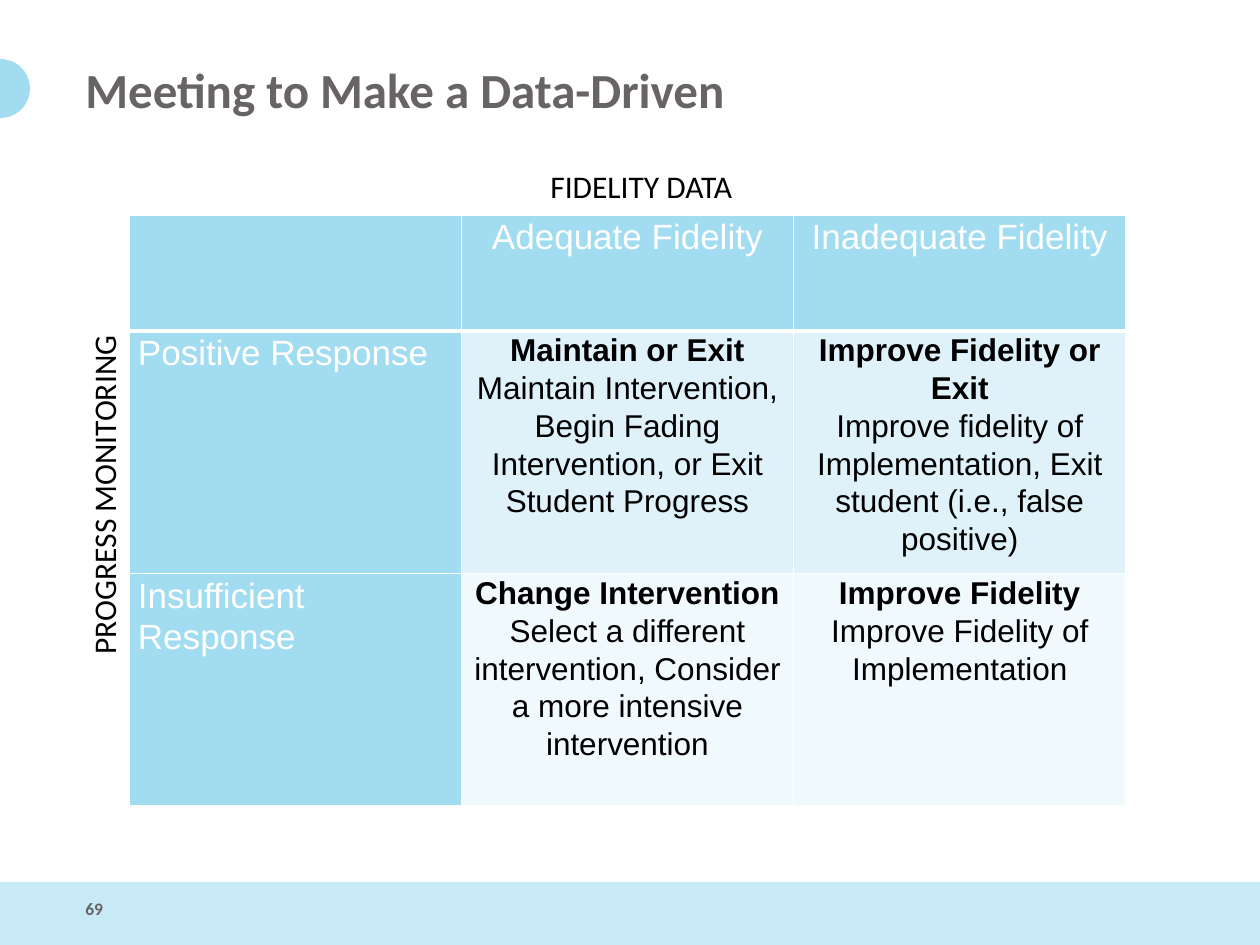
from lxml.etree import SubElement
from pptx import Presentation
from pptx.dml.color import RGBColor
from pptx.enum.shapes import MSO_SHAPE as SHAPE
from pptx.enum.text import MSO_ANCHOR as ANCHOR, PP_ALIGN as ALIGN
from pptx.oxml.ns import qn
from pptx.util import Pt

PX = 914400 / 126  # EMU per px
WHITE = RGBColor(0xFF, 0xFF, 0xFF)
BLACK = RGBColor(0, 0, 0)
GRAY = RGBColor(0x69, 0x64, 0x64)
SKY = RGBColor(0xA2, 0xDC, 0xF0)
FOOTER_BLUE = RGBColor(0xC7, 0xEA, 0xF6)
PALE = RGBColor(0xE0, 0xF2, 0xF9)
PALER = RGBColor(0xF0, 0xF9, 0xFC)

HEADERS = ["", "Adequate Fidelity", "Inadequate Fidelity"]
RESPONSES = [
    ("Positive Response", PALE, [
        ("Maintain or Exit", "Maintain Intervention, Begin Fading "
         "Intervention, or Exit Student Progress"),
        ("Improve Fidelity or Exit", "Improve fidelity of Implementation, "
         "Exit student (i.e., false positive)")]),
    ("Insufficient Response", PALER, [
        ("Change Intervention", "Select a different intervention, "
         "Consider a more intensive intervention"),
        ("Improve Fidelity", "Improve Fidelity of Implementation")]),
]


def emu(*lengths):
    return [round(v * PX) for v in lengths]


def style(p, size, color, font="Calibri", bold=False, align=ALIGN.LEFT):
    p.alignment = align
    for r in p.runs:
        f = r.font
        f.name, f.size, f.bold = font, Pt(size), bold
        f.color.rgb = color


def add_shape(s, kind, box, color):
    sp = s.shapes.add_shape(kind, *emu(*box))
    sp.shadow.inherit = False
    sp.fill.solid()
    sp.fill.fore_color.rgb = color
    sp.line.fill.background()


def add_label(s, box, text, size, color, anchor=ANCHOR.TOP, **kw):
    sp = s.shapes.add_textbox(*emu(*box))
    tf = sp.text_frame
    tf.word_wrap = True
    tf.vertical_anchor = anchor
    tf.text = text
    style(tf.paragraphs[0], size, color, **kw)
    return sp


def set_borders(cell, bottom=1):
    """White rules on all sides; they must precede the cell fill."""
    tc_pr = cell._tc.get_or_add_tcPr()
    for side, width in (("L", 1), ("R", 1), ("T", 1), ("B", bottom)):
        ln = SubElement(tc_pr, qn(f"a:ln{side}"), w=str(Pt(width)))
        fill = SubElement(ln, qn("a:solidFill"))
        SubElement(fill, qn("a:srgbClr"), val=str(WHITE))


def fill_cell(cell, lines, color, bottom=1):
    """Each line is (text, size, color, bold, align)."""
    set_borders(cell, bottom)
    cell.fill.solid()
    cell.fill.fore_color.rgb = color
    cell.margin_left = cell.margin_right = emu(9)[0]
    cell.margin_top = cell.margin_bottom = 0
    tf = cell.text_frame
    tf.text = "\n".join(line[0] for line in lines)
    for p, (_, size, ink, bold, align) in zip(tf.paragraphs, lines):
        p.line_spacing = 1.07
        style(p, size, ink, "Arial", bold, align)


def add_matrix(s, left, top, width, height):
    unit = height // 5  # header takes one unit, each response two
    frame = s.shapes.add_table(3, 3, *emu(left, top, width, height))
    table = frame.table
    for col in table.columns:
        col.width = emu(width / 3)[0]
    for row, units in zip(table.rows, (1, 2, 2)):
        row.height = emu(units * unit)[0]

    for c, text in enumerate(HEADERS):
        fill_cell(table.cell(0, c), [(text, 20, WHITE, False, ALIGN.CENTER)],
                  SKY, bottom=3)
    for r, (response, color, actions) in enumerate(RESPONSES, 1):
        fill_cell(table.cell(r, 0),
                  [(response, 20, WHITE, False, ALIGN.LEFT)], SKY)
        for c, (action, detail) in enumerate(actions, 1):
            fill_cell(table.cell(r, c),
                      [(action, 18, BLACK, True, ALIGN.CENTER),
                       (detail, 18, BLACK, False, ALIGN.CENTER)], color)


def add_decision_grid(s, left, top, width, height):
    add_matrix(s, left, top, width, height)
    # Axis labels
    add_label(s, (left + 409, top - 54, 483, 50), "FIDELITY DATA", 18, BLACK)
    side = add_label(s, (left - 309, top + 255, 567, 50),
                     "PROGRESS MONITORING", 18, BLACK, align=ALIGN.CENTER)
    side.rotation = 270


def add_header(s, left, top, width, height):
    add_shape(s, SHAPE.OVAL, (left - 29, top + 6, 59, 59), SKY)
    add_label(s, (left + 73, top, width - 168, height),
              "Meeting to Make a Data-Driven", 28, GRAY, bold=True)


def add_footer(s, left, top, width, height):
    add_shape(s, SHAPE.RECTANGLE, (left, top, width, height), FOOTER_BLUE)
    add_label(s, (left + 73, top + 10, 78, 32), "69", 10, GRAY,
              anchor=ANCHOR.MIDDLE, bold=True)


def main():
    prs = Presentation()
    prs.slide_width, prs.slide_height = emu(1260, 945)
    s = prs.slides.add_slide(prs.slide_layouts[6])
    add_footer(s, 0, 882, 1260, 63)
    add_header(s, 0, 53, 1260, 105)
    add_decision_grid(s, 129, 215, 997, 580)
    prs.save("out.pptx")


if __name__ == "__main__":
    main()
